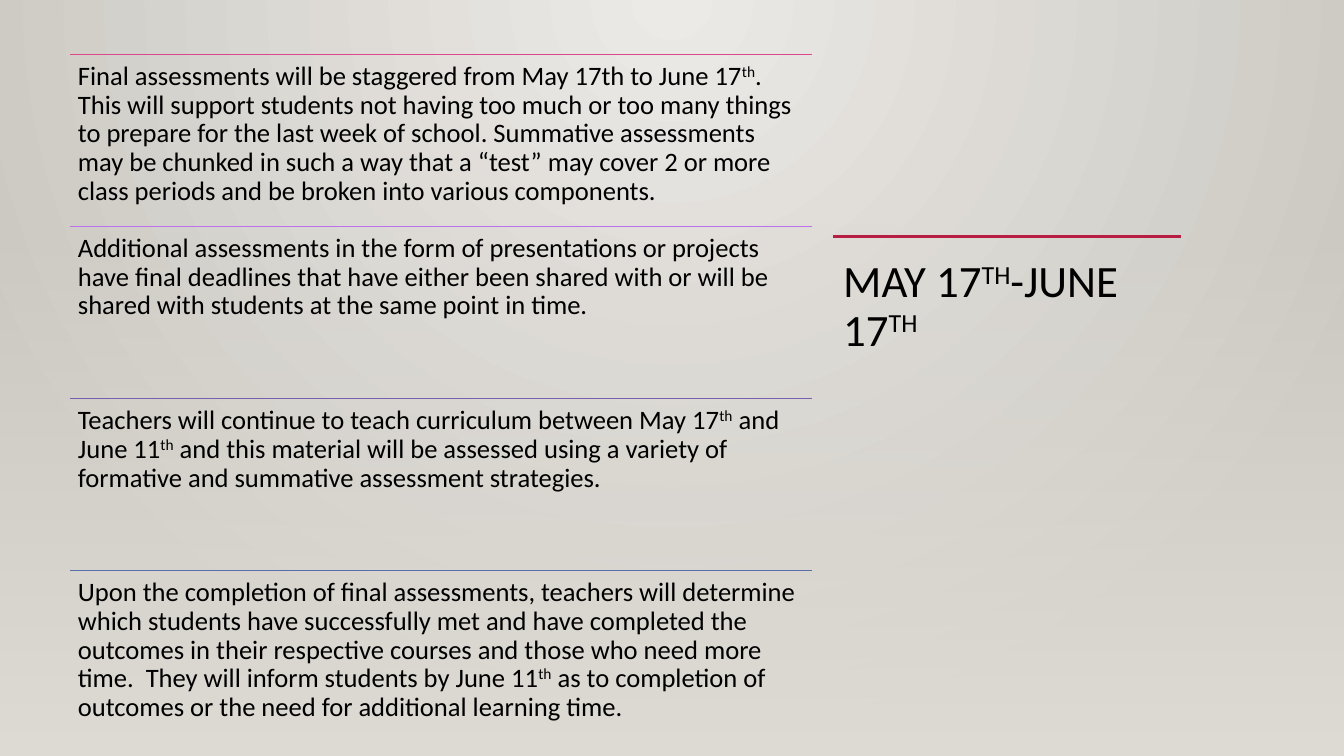
from lxml.etree import SubElement
from pptx import Presentation
from pptx.dml.color import RGBColor
from pptx.enum.shapes import MSO_CONNECTOR as Connector, MSO_SHAPE as Shape
from pptx.enum.text import MSO_ANCHOR as Anchor, PP_ALIGN as Align
from pptx.oxml.ns import qn
from pptx.util import Inches, Pt

COLORS = {
    "light": "ECEAE7", "dark": "CAC7C1", "floor": "DFDBD5", "text": "000000",
    "accent": "B71E42", "pink": "DE478E", "violet": "BC72F0",
    "purple": "795FAF", "blue": "586EA6",
}

SECTIONS = [
    ("pink", "Final assessments will be staggered from May 17th to June 17^th^. This will support "
             "students not having too much or too many things to prepare for the last week of school. "
             "Summative assessments may be chunked in such a way that a “test” may cover 2 or more "
             "class periods and be broken into various components."),
    ("violet", "Additional assessments in the form of presentations or projects have final deadlines "
               "that have either been shared with or will be shared with students at the same point in time."),
    ("purple", "Teachers will continue to teach curriculum between May 17^th^ and June 11^th^ and this "
               "material will be assessed using a variety of formative and summative assessment strategies."),
    ("blue", "Upon the completion of final assessments, teachers will determine which students have "
             "successfully met and have completed the outcomes in their respective courses and those "
             "who need more time.  They will inform students by June 11^th^ as to completion of "
             "outcomes or the need for additional learning time."),
]


class Slide:
    font = "Calibri"

    def __init__(self, deck):
        self.width, self.height = deck.slide_width, deck.slide_height
        self.page = deck.slides.add_slide(deck.slide_layouts[6])

    def x(self, percent):
        return round(self.width * percent / 100)

    def y(self, percent):
        return round(self.height * percent / 100)

    def color(self, name):
        return RGBColor.from_string(COLORS[name])

    def gradient(self, fill, names):
        fill.gradient()
        fill.gradient_angle = 270
        for stop, name, position in zip(fill.gradient_stops, names, (0, 1)):
            stop.color.rgb = self.color(name)
            stop.position = position

    def backdrop(self, center, edge):
        self.gradient(self.page.background.fill, (center, edge))
        gradient = self.page.element.xpath(".//p:bg//a:gradFill")[0]
        gradient.remove(gradient.find(qn("a:lin")))
        circle = SubElement(gradient, qn("a:path"), path="circle")
        SubElement(circle, qn("a:fillToRect"), l="43000", t="0", r="43000", b="100000")

    def fade(self, top, name):
        shape = self.page.shapes.add_shape(Shape.RECTANGLE, 0, self.y(top), self.width, self.y(100 - top))
        shape.shadow.inherit = False
        shape.line.fill.background()
        self.gradient(shape.fill, (name, name))
        first_color = shape.element.xpath(".//a:gradFill//a:srgbClr")[0]
        SubElement(first_color, qn("a:alpha"), val="0")

    def rule(self, left, top, width, name, weight):
        line = self.page.shapes.add_connector(
            Connector.STRAIGHT, self.x(left), self.y(top), self.x(left + width), self.y(top))
        line.line.color.rgb = self.color(name)
        line.line.width = Pt(weight)
        SubElement(line.element.spPr, qn("a:effectLst"))

    def text(self, left, top, width, height, words, size, inset):
        box = self.page.shapes.add_textbox(self.x(left), self.y(top), self.x(width), self.y(height))
        frame = box.text_frame
        frame.word_wrap = True
        frame.vertical_anchor = Anchor.TOP
        frame.margin_left = frame.margin_right = Inches(inset[0])
        frame.margin_top = frame.margin_bottom = Inches(inset[1])
        para = frame.paragraphs[0]
        para.alignment = Align.LEFT
        para.line_spacing = 0.9
        for index, part in enumerate(words.split("^")):
            if not part:
                continue
            span = para.add_run()
            span.text = part
            span.font.name = self.font
            span.font.size = Pt(size)
            span.font.color.rgb = self.color("text")
            if index % 2:
                span.font._element.set("baseline", "30000")


def main():
    deck = Presentation()
    deck.slide_width, deck.slide_height = Inches(13.33), Inches(7.5)
    slide = Slide(deck)
    slide.backdrop("light", "dark")
    slide.fade(29.47, "floor")

    slide.text(62, 33.6, 25.9, 54.67, "MAY 17^TH^-JUNE 17^TH^", 32, (0.1, 0.05))
    slide.rule(62, 31.3, 25.9, "accent", 2.5)

    left, top, width, pitch = 5.2, 7.2, 55.2, 22.76
    for row, (name, words) in enumerate(SECTIONS):
        row_top = top + row * pitch
        slide.rule(left, row_top, width, name, 1.25)
        slide.text(left, row_top, width, pitch, words, 19, (0.08, 0.08))

    deck.save("out.pptx")


if __name__ == "__main__":
    main()
